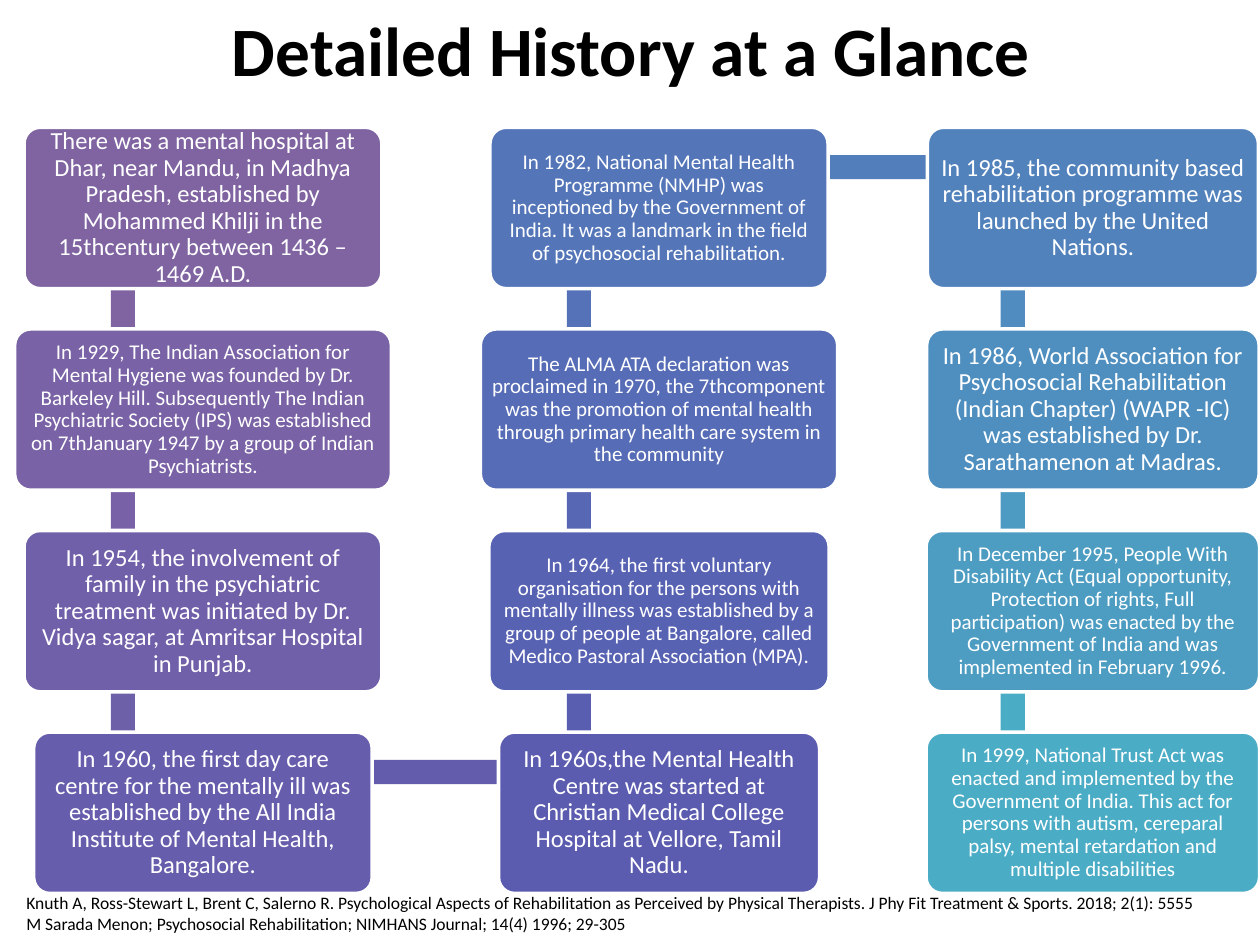
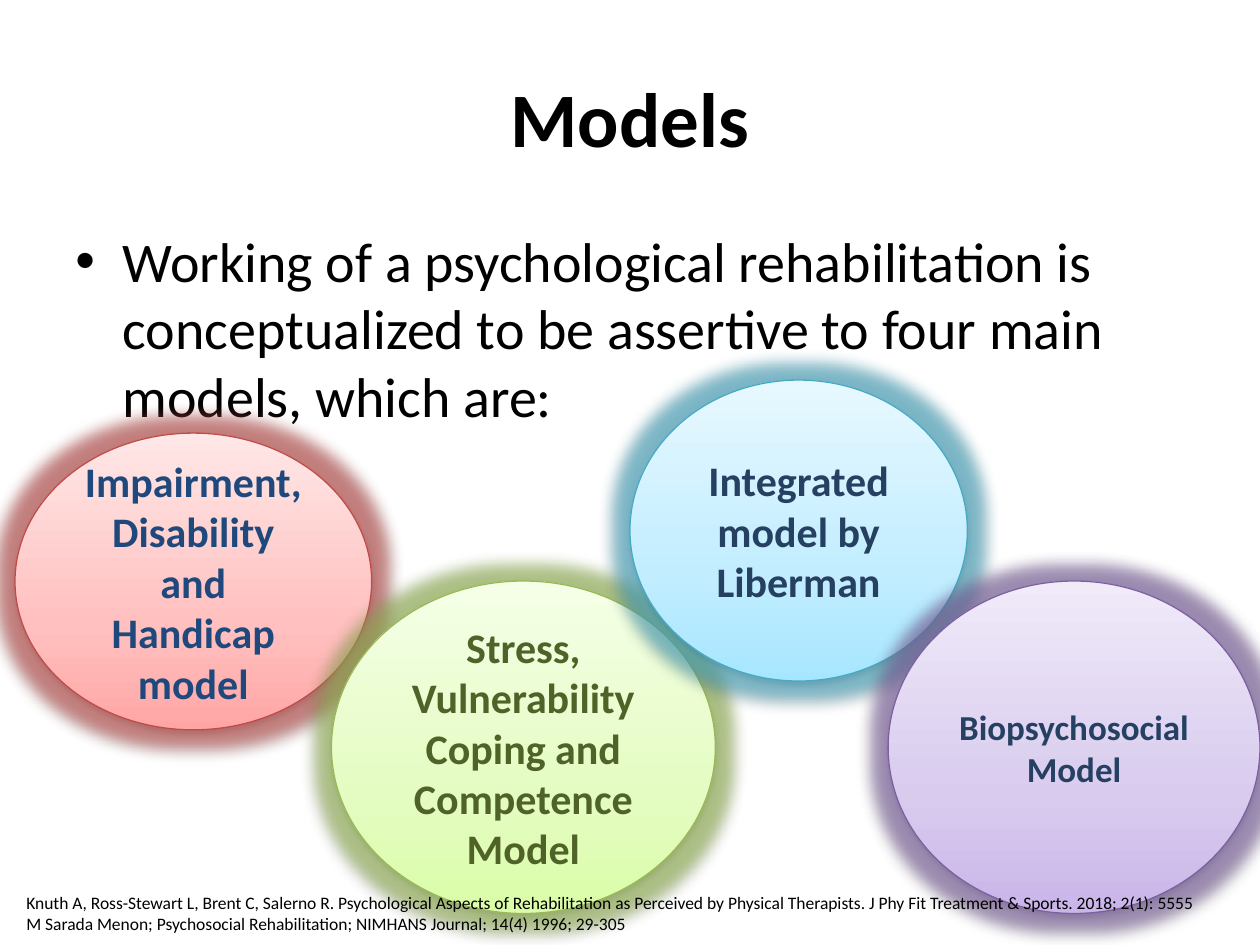
"""Builds two slides on the history and the models of psychosocial rehabilitation."""
from lxml import etree
from pptx import Presentation
from pptx.dml.color import RGBColor
from pptx.enum import shapes, text
from pptx.oxml import parse_xml
from pptx.oxml.ns import qn
from pptx.util import Pt

DRAWING = 'xmlns:a="http://schemas.openxmlformats.org/drawingml/2006/main"'
FONT = "Calibri"
COLORS = {
    "ink": "000000", "paper": "FFFFFF",
    "navy": "1F497D", "olive": "4F6228", "slate": "254061",
}
REFERENCES = [
    "Knuth A, Ross-Stewart L, Brent C, Salerno R. Psychological Aspects of Rehabilitation as "
    "Perceived by Physical Therapists. J Phy Fit Treatment & Sports. 2018; 2(1): 5555",
    "M Sarada Menon; Psychosocial Rehabilitation; NIMHANS Journal; 14(4) 1996; 29-305",
]

COLUMN_CENTERS = (116, 376.6, 624.5)
FIRST_TOP, ROW_STEP, BOX_HEIGHT = 72.75, 115.2, 92.2
ANCHOR_LEFT, ANCHOR_DOWN, BAR = 45.8, 22.8, 13.8
PLACES = [(0, 0), (0, 1), (0, 2), (0, 3), (1, 3), (1, 2), (1, 1), (1, 0),
          (2, 0), (2, 1), (2, 2), (2, 3)]
EVENTS = [
    ("There was a mental hospital at Dhar, near Mandu, in Madhya Pradesh, established by "
     "Mohammed Khilji in the 15thcentury between 1436 –1469 A.D.", 14, 204.5, "8064A2"),
    ("In 1929, The Indian Association for Mental Hygiene was founded by Dr. Barkeley Hill. "
     "Subsequently The Indian Psychiatric Society (IPS) was established on 7thJanuary 1947 "
     "by a group of Indian Psychiatrists.", 12, 215.3, "7962A5"),
    ("In 1954, the involvement of family in the psychiatric treatment was initiated by "
     "Dr. Vidya sagar, at Amritsar Hospital in Punjab.", 14, 204.5, "705FA9"),
    ("In 1960, the first day care centre for the mentally ill was established by the "
     "All India Institute of Mental Health, Bangalore.", 14, 193.5, "665DAC"),
    ("In 1960s,the Mental Health Centre was started at Christian Medical College Hospital "
     "at Vellore, Tamil Nadu.", 14, 183.5, "5B5BAF"),
    ("In 1964, the first voluntary organisation for the persons with mentally illness was "
     "established by a group of people at Bangalore, called Medico Pastoral Association "
     "(MPA).", 12, 194.5, "5862B3"),
    ("The ALMA ATA declaration was proclaimed in 1970, the 7thcomponent was the promotion "
     "of mental health through primary health care system in the community",
     12, 204.2, "566CB6"),
    ("In 1982, National Mental Health Programme (NMHP) was inceptioned by the Government "
     "of India. It was a landmark in the field of psychosocial rehabilitation.",
     12, 193.2, "5476B9"),
    ("In 1985, the community based rehabilitation programme was launched by the United "
     "Nations.", 14, 189.2, "5282BC"),
    ("In 1986, World Association for Psychosocial Rehabilitation (Indian Chapter) "
     "(WAPR -IC) was established by Dr. Sarathamenon at Madras.", 14, 190, "4F8FC0"),
    ("In December 1995, People With Disability Act (Equal opportunity, Protection of "
     "rights, Full participation) was enacted by the Government of India and was "
     "implemented in February 1996.", 12, 190.6, "4D9DC3"),
    ("In 1999, National Trust Act was enacted and implemented by the Government of India. "
     "This act for persons with autism, cereparal palsy, mental retardation and multiple "
     "disabilities", 12, 190.6, "4BACC6"),
]
BAR_COLORS = ("8064A2", "7861A6", "6E5FA9", "635CAD", "5A5EB1", "5767B4",
              "5572B8", "527EBC", "508CBF", "4D9BC3", "4BACC6")

MODELS = [
    ("Impairment, Disability and Handicap model", 24, "navy", (8.6, 247.5, 203.8, 169.6),
     ("FFA6A5", "FFC0BF", "FFE7E7"), "BF4C48", "C0504D"),
    ("Stress, Vulnerability Coping and Competence Model", 24, "olive",
     (189.4, 332, 219.4, 190), ("DAFDA7", "E4FCC2", "F5FFE7"), "98B955", "9BBB59"),
    ("Integrated model by Liberman", 24, "slate", (360, 217.2, 192.8, 172),
     ("A7E6FF", "C1EDFF", "E7F8FF"), "46AAC5", "4BACC6"),
    ("Biopsychosocial Model", 20, "slate", (507.5, 332, 212.5, 190),
     ("C9B5E8", "D8CBEE", "F0EAF9"), "7D60A0", "8064A2"),
]


def write(frame, lines, size, color="ink", bold=False, align=text.PP_ALIGN.LEFT,
          anchor=text.MSO_ANCHOR.TOP, inset=None, spacing=None, bullet=None):
    """Fill a text frame with one formatted paragraph per line."""
    frame.word_wrap = True
    frame.auto_size = text.MSO_AUTO_SIZE.NONE
    frame.vertical_anchor = anchor
    if inset is not None:
        frame.margin_left = frame.margin_right = Pt(inset)
        frame.margin_top = frame.margin_bottom = Pt(inset)
    for index, line in enumerate(lines):
        para = frame.add_paragraph() if index else frame.paragraphs[0]
        para.alignment = align
        if spacing:
            para.line_spacing = spacing
        if bullet:
            properties = para._p.get_or_add_pPr()
            properties.set("marL", str(Pt(bullet)))
            properties.set("indent", str(-Pt(bullet)))
            etree.SubElement(properties, qn("a:buFont"), typeface="Arial")
            etree.SubElement(properties, qn("a:buChar"), char="•")
        span = para.add_run()
        span.text = line
        span.font.name = FONT
        span.font.size = Pt(size)
        span.font.bold = bold
        span.font.color.rgb = RGBColor.from_string(COLORS[color])


class Deck:
    """Holds the presentation style and the current slide."""

    def __init__(self):
        """Start an empty 4:3 presentation."""
        self.deck = Presentation()
        self.deck.slide_width, self.deck.slide_height = Pt(720), Pt(540)
        self.page = None

    def add_page(self, title, size, area):
        """Add a slide with a bold centred title."""
        self.page = self.deck.slides.add_slide(self.deck.slide_layouts[5])
        box = self.page.shapes.title
        box.left, box.top, box.width, box.height = map(Pt, area)
        write(box.text_frame, [title], size, bold=True, align=text.PP_ALIGN.CENTER,
              anchor=text.MSO_ANCHOR.MIDDLE)

    def add_text(self, lines, area, size, **style):
        """Add a plain text box."""
        box = self.page.shapes.add_textbox(*map(Pt, area))
        write(box.text_frame, lines, size, **style)

    def add_references(self):
        """Add the shared reference lines at the bottom."""
        self.add_text(REFERENCES, (8, 506.2, 711, 31.5), 10)

    def add_shape(self, kind, area, fill=None, line=None, line_width=1):
        """Add a preset shape without a shadow."""
        shape = self.page.shapes.add_shape(kind, *map(Pt, area))
        shape.shadow.inherit = False
        if fill:
            shape.fill.solid()
            shape.fill.fore_color.rgb = RGBColor.from_string(fill)
        if line:
            shape.line.color.rgb = RGBColor.from_string(line)
            shape.line.width = Pt(line_width)
        else:
            shape.line.fill.background()
        return shape

    def add_bar(self, start, end, color):
        """Add the band that joins two anchor points of the timeline."""
        left, right = sorted((start[0], end[0]))
        top, bottom = sorted((start[1], end[1]))
        if left == right:
            area = (left - BAR / 2, top, BAR, bottom - top)
        else:
            area = (left, top - BAR / 2, right - left, BAR)
        self.add_shape(shapes.MSO_SHAPE.RECTANGLE, area, color)

    def add_event(self, label, size, area, color):
        """Add a rounded timeline box."""
        box = self.add_shape(shapes.MSO_SHAPE.ROUNDED_RECTANGLE, area, color,
                             COLORS["paper"], 2)
        box.adjustments[0] = 0.1
        write(box.text_frame, [label], size, "paper", align=text.PP_ALIGN.CENTER,
              anchor=text.MSO_ANCHOR.MIDDLE, inset=size * 0.3, spacing=0.9)

    def add_model(self, label, size, color, area, stops, line, glow):
        """Add a glowing ellipse with an upward gradient."""
        oval = self.add_shape(shapes.MSO_SHAPE.OVAL, area, line=line, line_width=0.75)
        marks = "".join(f'<a:gs pos="{place}"><a:srgbClr val="{stop}"/></a:gs>'
                        for place, stop in zip((0, 35000, 100000), stops))
        properties = oval._element.spPr
        properties.insert(2, parse_xml(
            f'<a:gradFill {DRAWING} rotWithShape="1"><a:gsLst>{marks}</a:gsLst>'
            '<a:lin ang="16200000" scaled="1"/></a:gradFill>'))
        effects = properties.find(qn("a:effectLst"))
        effects.append(parse_xml(
            f'<a:glow {DRAWING} rad="{Pt(18)}"><a:srgbClr val="{glow}">'
            '<a:alpha val="60000"/></a:srgbClr></a:glow>'))
        effects.append(parse_xml(
            f'<a:outerShdw {DRAWING} blurRad="{Pt(3.1)}" dist="{Pt(1.6)}" dir="5400000" '
            f'rotWithShape="0"><a:srgbClr val="{COLORS["ink"]}"><a:alpha val="38000"/>'
            '</a:srgbClr></a:outerShdw>'))
        write(oval.text_frame, [label], size, color, bold=True,
              align=text.PP_ALIGN.CENTER, anchor=text.MSO_ANCHOR.MIDDLE)


def build_history(deck):
    """Draw the timeline that winds through three columns."""
    deck.add_page("Detailed History at a Glance", 39.6, (36.7, 0, 648, 55.4))
    spots = [(COLUMN_CENTERS[column], FIRST_TOP + row * ROW_STEP) for column, row in PLACES]
    anchors = [(center - ANCHOR_LEFT, top + ANCHOR_DOWN) for center, top in spots]
    for index, (label, size, width, color) in enumerate(EVENTS):
        if index < len(BAR_COLORS):
            deck.add_bar(anchors[index], anchors[index + 1], BAR_COLORS[index])
        center, top = spots[index]
        deck.add_event(label, size, (center - width / 2, top, width, BOX_HEIGHT), color)
    deck.add_references()


def build_models(deck):
    """Draw the introduction and the four models."""
    deck.add_page("Models", 44, (36, 21.6, 648, 90))
    deck.add_text(["Working of a psychological rehabilitation is conceptualized to be "
                   "assertive to four main models, which are:"],
                  (36, 126, 648, 138), 32, bullet=27)
    for model in MODELS:
        deck.add_model(*model)
    deck.add_references()


def main():
    """Build and save the presentation."""
    deck = Deck()
    build_history(deck)
    build_models(deck)
    deck.deck.save("out.pptx")


if __name__ == "__main__":
    main()
